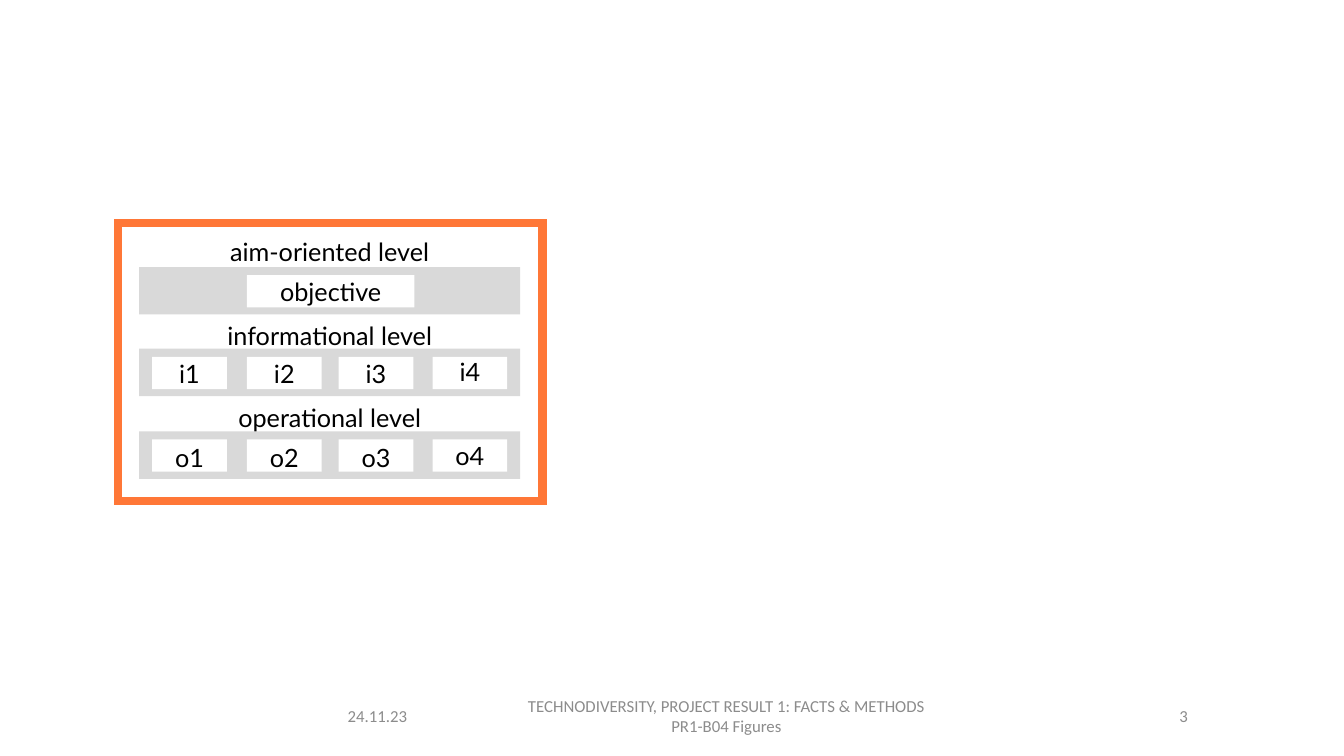
from lxml.etree import SubElement
from pptx import Presentation
from pptx.dml.color import RGBColor
from pptx.enum.shapes import MSO_SHAPE as Kind
from pptx.enum.text import MSO_ANCHOR as Anchor, PP_ALIGN as Align
from pptx.oxml.ns import qn
from pptx.util import Inches, Pt

BLACK = RGBColor(0x00, 0x00, 0x00)
WHITE = RGBColor(0xFF, 0xFF, 0xFF)
SILVER = RGBColor(0xD9, 0xD9, 0xD9)
GRAY = RGBColor(0x8C, 0x8C, 0x8C)
ORANGE = RGBColor(0xFF, 0x77, 0x37)


class Board:
    body = {"name": "Lato", "size": Pt(18)}
    foot = {"name": "Calibri", "size": Pt(12)}

    def __init__(self, slide):
        self.shapes = slide.shapes

    def box(self, x, y, w, h, fill, kind=Kind.RECTANGLE):
        shape = self.shapes.add_shape(kind, Inches(x), Inches(y), Inches(w), Inches(h))
        shape.shadow.inherit = False
        shape.fill.solid()
        shape.fill.fore_color.rgb = fill
        shape.line.fill.background()
        return shape

    def panel(self, x, y, w, h, fill):
        shape = self.box(x, y, w, h, fill, Kind.ROUNDED_RECTANGLE)
        shape.adjustments[0] = 0
        return shape

    def frame(self, x, y, w, h, fill, color, width):
        shape = self.panel(x, y, w, h, fill)
        shape.line.color.rgb = color
        shape.line.width = Pt(width)
        edge = shape.line.color.rgb and shape.element.spPr.find(qn("a:ln"))
        SubElement(edge, qn("a:miter"), lim="800000")

    def text(self, x, y, w, lines, align=Align.CENTER, style=body, color=BLACK, anchor=Anchor.TOP):
        label = self.shapes.add_textbox(Inches(x), Inches(y), Inches(w), Inches(0.4))
        frame = label.text_frame
        for key, value in {"word_wrap": True, "vertical_anchor": anchor}.items():
            setattr(frame, key, value)
        frame.text = "\n".join(lines)
        for para in frame.paragraphs:
            para.alignment = align
            for key, value in style.items():
                setattr(para.font, key, value)
            para.font.color.rgb = color

    def footer(self, x, w, lines, align):
        self.text(x, 6.9, w, lines, align, self.foot, GRAY, Anchor.MIDDLE)


def main():
    deck = Presentation()
    deck.slide_width, deck.slide_height = Inches(13.33), Inches(7.5)
    board = Board(deck.slides.add_slide(deck.slide_layouts[6]))

    board.footer(3.35, 1.34, ["24.11.23"], Align.LEFT)
    title = ["TECHNODIVERSITY, PROJECT RESULT 1: FACTS & METHODS", "PR1-B04 Figures"]
    board.footer(4.86, 4.69, title, Align.CENTER)
    board.footer(9.77, 2.11, ["3"], Align.RIGHT)

    board.frame(1.17, 2.21, 4.21, 2.76, WHITE, ORANGE, 6)
    four = [(1.51, 0.74), (2.45, 0.74), (3.36, 0.74), (4.29, 0.74)]
    levels = [
        ("aim-oriented level", 2.65, 2.3, 2.69, [(2.45, 1.66)], ["objective"]),
        ("informational level", 3.46, 3.13, 3.51, four, ["i1", "i2", "i3", "i4"]),
        ("operational level", 4.28, 3.94, 4.34, four, ["o1", "o2", "o3", "o4"]),
    ]
    for name, top, head, base, cells, words in levels:
        board.panel(1.38, top, 3.78, 0.47, SILVER)
        board.text(1.38, head, 3.78, [name])
        for (left, width), word in zip(cells, words):
            board.box(left, top + 0.08, width, 0.32, WHITE)
            rise = 0.02 if word.endswith("4") else 0
            board.text(left, base - rise, width, [word])

    deck.save("out.pptx")


if __name__ == "__main__":
    main()
